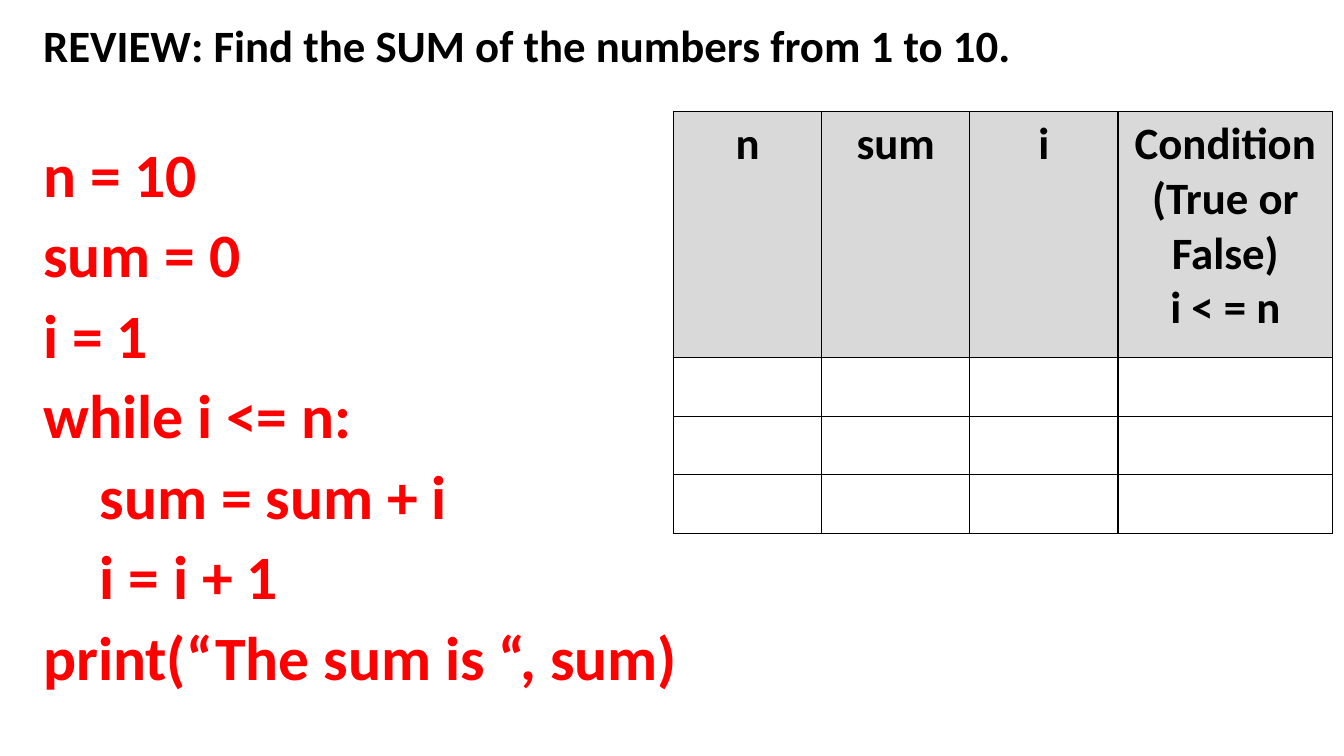
from lxml import etree
from pptx import Presentation
from pptx.dml.color import RGBColor
from pptx.enum.text import PP_ALIGN
from pptx.oxml.ns import qn
from pptx.util import Inches, Pt

CENTER = PP_ALIGN.CENTER
COLORS = {"ink": "000000", "code": "FF0000", "header": "D9D9D9"}
FONT = "Calibri"
BLANK_LAYOUT = 6

TITLE = "REVIEW: Find the SUM of the numbers from 1 to 10."
CODE = [
    ("n = 10", 0),
    ("sum = 0", 0),
    ("i = 1", 0),
    ("while i <= n:", 0),
    ("sum = sum + i", 1),
    ("i = i + 1", 1),
    ("print(“The sum is “, sum)", 0),
]
HEADERS = [["n"], ["sum"], ["i"], ["Condition (True or False)", "i < = n"]]
COLUMN_WIDTHS = [1.47] * 3 + [2.13]
ROW_HEIGHTS = [2.44] + [0.58] * 3
INDENT = 0.56


def add_span(para, text, size, color):
    span = para.add_run()
    span.text = text
    formats = {"name": FONT, "size": Pt(size), "bold": True}
    for name, value in formats.items():
        setattr(span.font, name, value)
    span.font.color.rgb = RGBColor.from_string(COLORS[color])


def add_borders(cell):
    properties = cell._tc.get_or_add_tcPr()
    for position, side in enumerate(("lnL", "lnR", "lnT", "lnB")):
        line = etree.Element(qn(f"a:{side}"), w=str(Pt(1)))
        fill = etree.SubElement(line, qn("a:solidFill"))
        etree.SubElement(fill, qn("a:srgbClr"), val=COLORS["ink"])
        properties.insert(position, line)


deck = Presentation()
deck.slide_width, deck.slide_height = Inches(13.33), Inches(7.5)
page = deck.slides.add_slide(deck.slide_layouts[BLANK_LAYOUT])

box = page.shapes.add_textbox(Inches(0.33), Inches(0.19), Inches(12.67), Inches(7.27))
frame = box.text_frame
frame.word_wrap = True
lines = [(TITLE, 0, 32, "ink", 10)]
for number, (text, level) in enumerate(CODE):
    lines.append((text, level, 44, "code", 10 if number else 51))
for number, (text, level, size, color, space) in enumerate(lines):
    para = frame.add_paragraph() if number else frame.paragraphs[0]
    para.line_spacing = 0.9
    para.space_before = Pt(space)
    if level:
        para._p.get_or_add_pPr().set("marL", str(Inches(INDENT * level)))
    add_span(para, text, size, color)

table = page.shapes.add_table(
    len(ROW_HEIGHTS), len(COLUMN_WIDTHS), Inches(6.68), Inches(1.11),
    Inches(sum(COLUMN_WIDTHS)), Inches(sum(ROW_HEIGHTS)),
).table
table.first_row = table.horz_banding = False
for column, width in zip(table.columns, COLUMN_WIDTHS):
    column.width = Inches(width)
for row, height in zip(table.rows, ROW_HEIGHTS):
    row.height = Inches(height)
for cell in table.iter_cells():
    cell.fill.background()
    add_borders(cell)

for cell, texts in zip(table.rows[0].cells, HEADERS):
    cell.fill.solid()
    cell.fill.fore_color.rgb = RGBColor.from_string(COLORS["header"])
    for number, text in enumerate(texts):
        para = cell.text_frame.add_paragraph() if number else cell.text_frame.paragraphs[0]
        para.alignment = CENTER
        add_span(para, text, 32, "ink")

deck.save("out.pptx")
